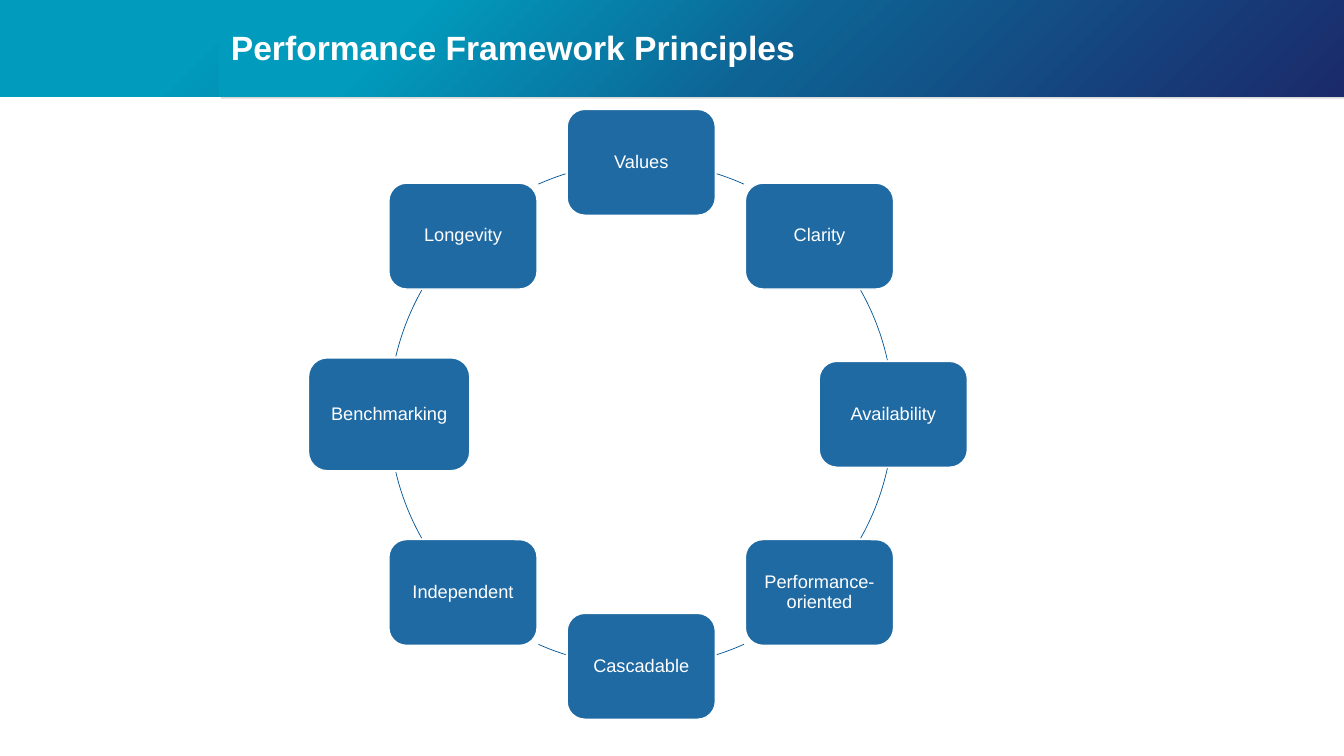
import math
from lxml import etree
from pptx import Presentation
from pptx import util as u
from pptx.dml.color import RGBColor
from pptx.enum import shapes, text
from pptx.oxml.ns import qn

TITLE = "Performance Framework Principles"
# Clockwise from the top
PRINCIPLES = ["Values", "Clarity", "Availability", "Performance-oriented",
              "Cascadable", "Independent", "Benchmarking", "Longevity"]
BOX = (1.47, 1.05)
LARGER_BOXES = {"Benchmarking": (1.6, 1.12)}
CENTER_X, CENTER_Y, RADIUS = 6.36, 4.11, 2.5
STEP = 360 / len(PRINCIPLES)
BLUE, WHITE, GREY = "005697", "FFFFFF", "D9D9D9"
BAND_STOPS = [(17, "009BBD"), (50, "0E6394"), (100, "1B2A6B")]
BAND_HEIGHT = 0.98


def rgb(hex_color):
    return RGBColor.from_string(hex_color)


def add_shape(kind, left, top, width, height):
    sp = s.shapes.add_shape(kind, *map(u.Inches, (left, top, width, height)))
    sp.shadow.inherit = False
    return sp


def add_rect(left, top, width, color):
    sp = add_shape(shapes.MSO_SHAPE.RECTANGLE, left, top, width, BAND_HEIGHT)
    sp.fill.solid()
    sp.fill.fore_color.rgb = rgb(color)
    sp.line.fill.background()
    return sp


def add_band(left, top, width):
    """Header rectangle with the three-colour diagonal gradient."""
    sp = add_rect(left, top, width, BAND_STOPS[0][1])
    sp.fill.gradient()
    sp.fill.gradient_angle = 315
    stops = sp._element.spPr.find(qn("a:gradFill")).find(qn("a:gsLst"))
    for old in list(stops):
        stops.remove(old)
    for percent, color in BAND_STOPS:
        gs = etree.SubElement(stops, qn("a:gs"), pos=str(percent * 1000))
        etree.SubElement(gs, qn("a:srgbClr"), val=color)


def add_box(label, x, y, width, height):
    sp = add_shape(shapes.MSO_SHAPE.ROUNDED_RECTANGLE,
                   x - width / 2, y - height / 2, width, height)
    sp.fill.solid()
    sp.fill.fore_color.rgb = rgb(BLUE)
    color = sp._element.spPr.find(qn("a:solidFill"))[0]
    etree.SubElement(color, qn("a:alpha"), val="88000")
    sp.line.color.rgb = rgb(WHITE)
    sp.line.width = u.Pt(1)
    tf = sp.text_frame
    tf.word_wrap = True
    tf.vertical_anchor = text.MSO_ANCHOR.MIDDLE
    tf.margin_left = tf.margin_right = u.Inches(0.1)
    tf.margin_top = tf.margin_bottom = u.Inches(0.1)
    p = tf.paragraphs[0]
    p.text = label
    p.alignment = text.PP_ALIGN.CENTER
    p.line_spacing = 0.9
    p.font.size, p.font.name = u.Pt(13), "Arial"
    p.font.color.rgb = rgb(WHITE)


def on_ring(angle):
    a = math.radians(angle)
    return CENTER_X + RADIUS * math.cos(a), CENTER_Y + RADIUS * math.sin(a)


def covers(box, angle):
    x, y = on_ring(angle)
    _, box_x, box_y, width, height = box
    return (abs(x - box_x) < width / 2 + 0.01
            and abs(y - box_y) < height / 2 + 0.01)


def add_arc(start, box, next_box):
    """Draw the part of the ring that is free between two boxes."""
    free = [a for a in (start + i * STEP / 400 for i in range(401))
            if not covers(box, a) and not covers(next_box, a)]
    sp = add_shape(shapes.MSO_SHAPE.ARC, CENTER_X - RADIUS, CENTER_Y - RADIUS,
                   2 * RADIUS, 2 * RADIUS)
    # Arc angles are in 1/60000 degree, adjustments in 1/100000
    for i, angle in enumerate((free[0], free[-1])):
        sp.adjustments[i] = angle % 360 * 0.6
    sp.fill.background()
    sp.line.color.rgb = rgb(BLUE)
    sp.line.width = u.Pt(0.5)


prs = Presentation()
prs.slide_width, prs.slide_height = u.Inches(13.33), u.Inches(7.5)
s = prs.slides.add_slide(prs.slide_layouts[5])

add_band(0, -0.02, 13.33)
add_rect(2.19, 0, 11.14, GREY)
add_band(2.17, -0.02, 11.16)

title = s.shapes.title
title.left, title.top = u.Inches(2.19), u.Inches(0.11)
title.width, title.height = u.Inches(11.14), u.Inches(0.76)
title._element.getparent().append(title._element)  # in front of the band
title.text_frame.vertical_anchor = text.MSO_ANCHOR.MIDDLE
p = title.text_frame.paragraphs[0]
p.text = TITLE
p.alignment = text.PP_ALIGN.LEFT
p.line_spacing = 0.9
p.font.size, p.font.name, p.font.bold = u.Pt(24), "Arial", True
p.font.color.rgb = rgb(WHITE)

angles = [-90 + i * STEP for i in range(len(PRINCIPLES))]
boxes = [(label, *on_ring(angle), *LARGER_BOXES.get(label, BOX))
         for label, angle in zip(PRINCIPLES, angles)]
for angle, box, next_box in zip(angles, boxes, boxes[1:] + boxes[:1]):
    add_box(*box)
    add_arc(angle, box, next_box)

prs.save("out.pptx")
